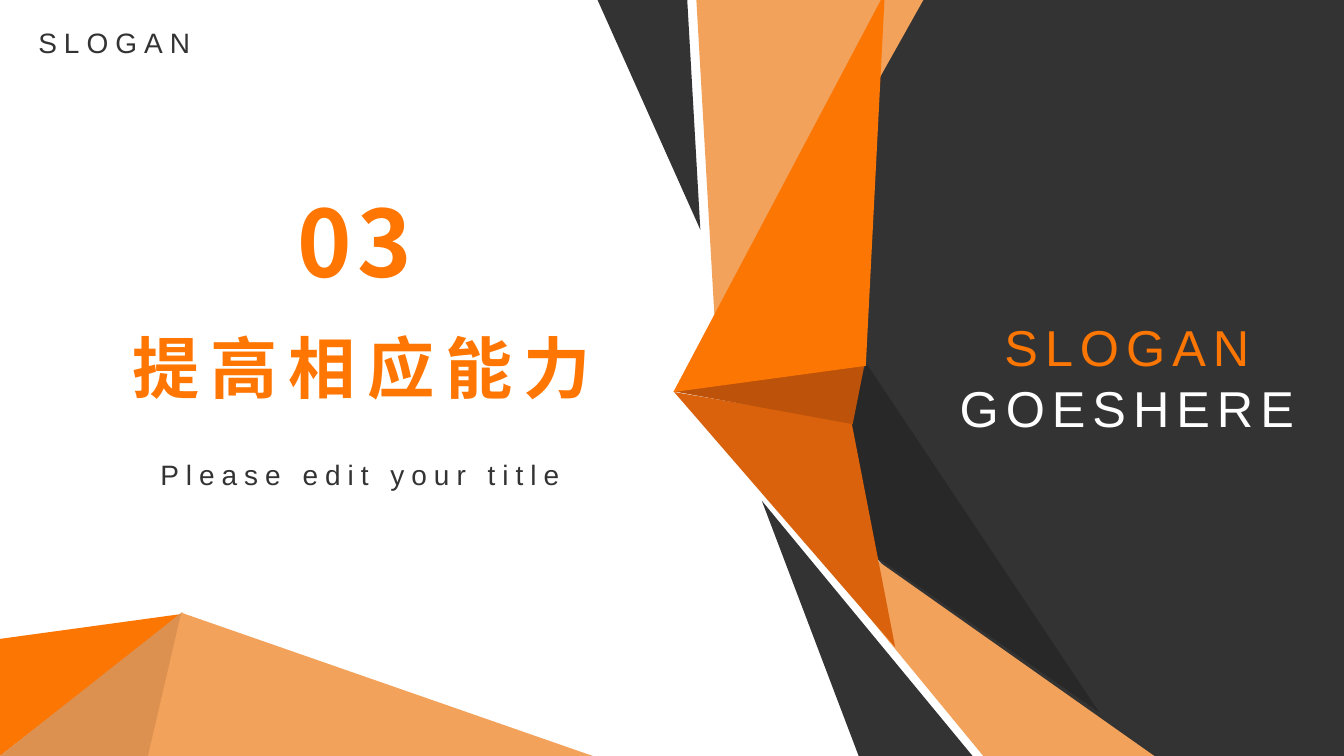
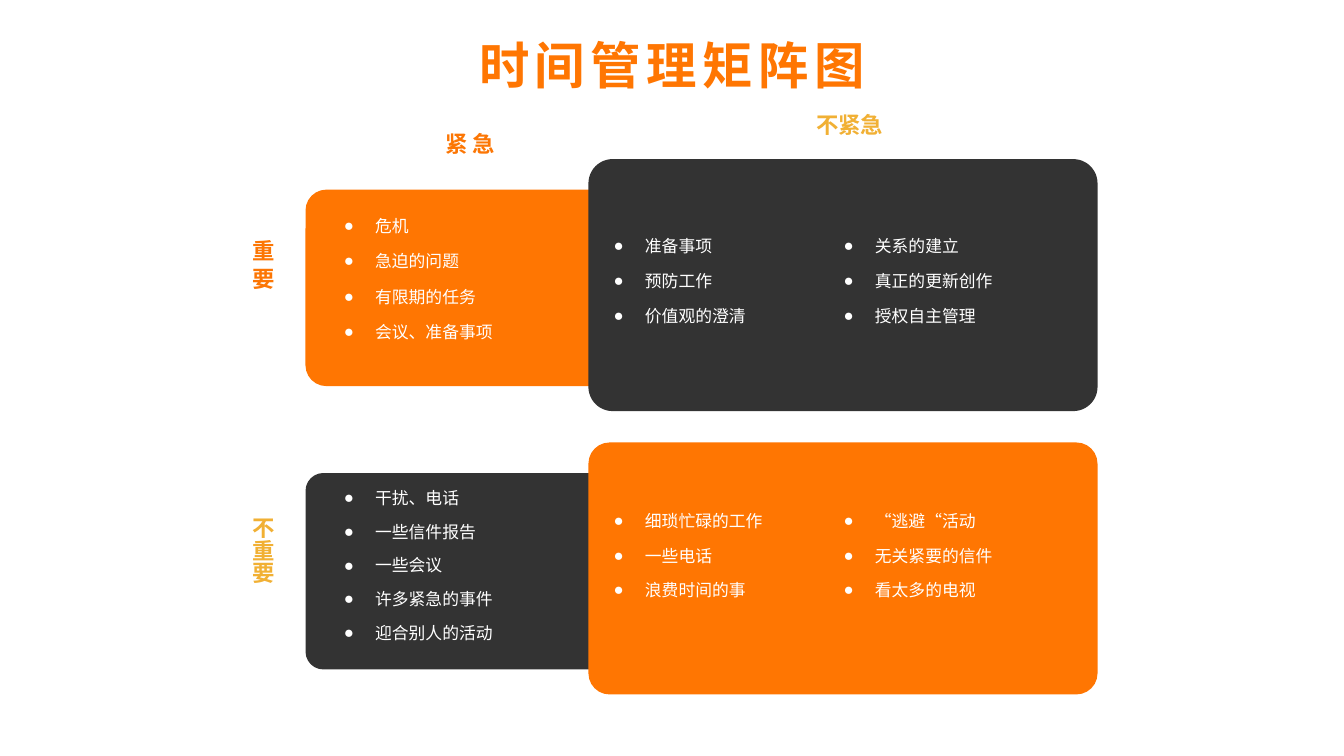
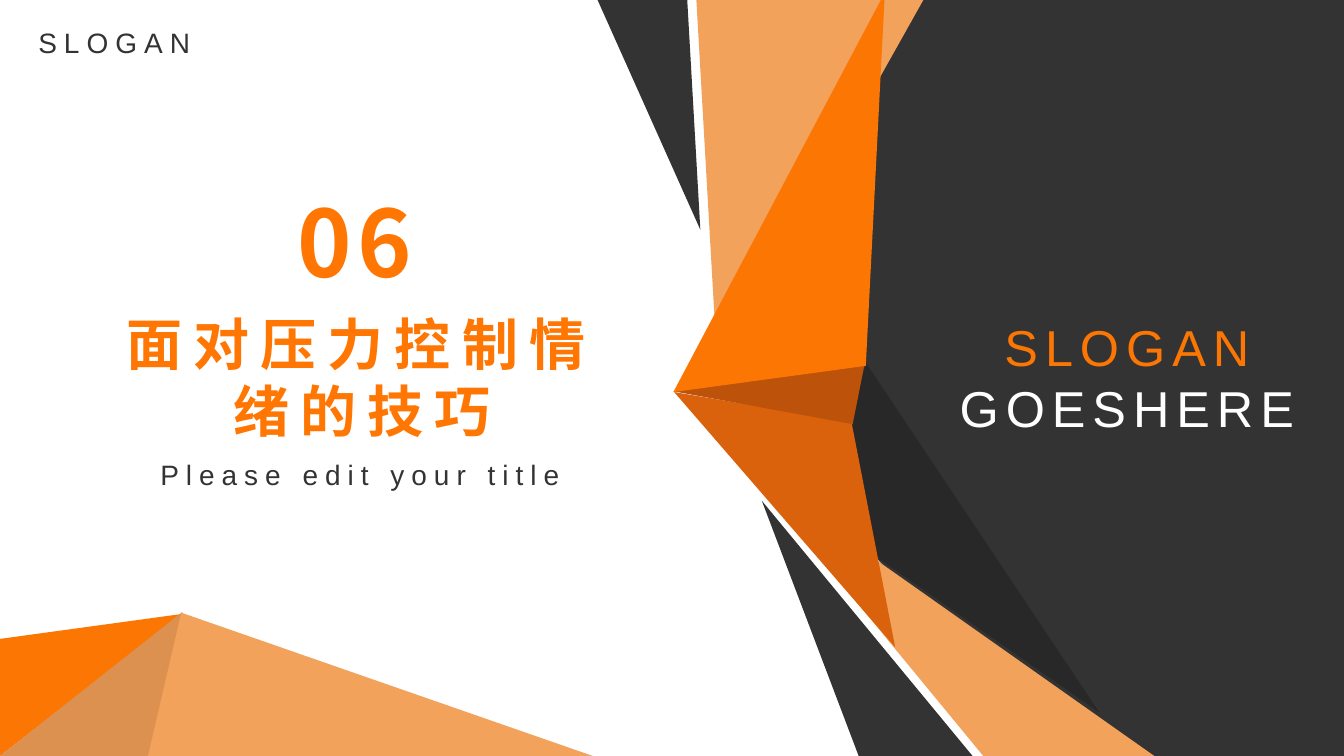
import pptx
import pptx.dml.color
import pptx.enum.shapes
import pptx.enum.text
import pptx.oxml
import pptx.oxml.ns
import pptx.util

Cm = pptx.util.Cm
Pt = pptx.util.Pt
RGBColor = pptx.dml.color.RGBColor
ALIGN = pptx.enum.text.PP_ALIGN

ORANGE = RGBColor(0xFF, 0x76, 0x02)
VIVID = RGBColor(0xFC, 0x76, 0x04)
PALE = RGBColor(0xF2, 0xA2, 0x5B)
TAN = RGBColor(0xDC, 0x91, 0x50)
RUST = RGBColor(0xDA, 0x62, 0x0C)
BROWN = RGBColor(0xBD, 0x52, 0x0A)
AMBER = RGBColor(0xF1, 0xB0, 0x34)
DARK = RGBColor(0x33, 0x33, 0x33)
BLACK = RGBColor(0x00, 0x00, 0x00)
WHITE = RGBColor(0xFF, 0xFF, 0xFF)

CHINESE = "Noto Sans CJK SC"
LATIN = "Arial"
LINE_FACTOR = 1.2
LIST_INDENT = 0.79
WIDTH, HEIGHT = 33.87, 19.05

HEADING = {"name": CHINESE, "bold": True}
CAPTION = {"name": LATIN, "bold": False, "size": Pt(20)}
SLOGAN = {"name": LATIN, "bold": False, "size": Pt(36)}
LABEL = {"name": CHINESE, "bold": True, "size": Pt(16)}
ITEM = {"name": CHINESE, "bold": False, "size": Pt(12)}


def paint(shape, color):
    shape.shadow.inherit = False
    shape.fill.solid()
    shape.fill.fore_color.rgb = color
    shape.line.fill.background()


def write(box, place, lines, look, spacing=0, align=ALIGN.CENTER, pitch=None, bullet=None):
    for name, value in zip(("left", "top", "width", "height"), place):
        setattr(box, name, Cm(value))
    frame = box.text_frame
    frame.word_wrap = True
    frame.auto_size = pptx.enum.text.MSO_AUTO_SIZE.NONE
    frame.vertical_anchor = pptx.enum.text.MSO_ANCHOR.TOP
    paragraph_look = {
        "alignment": align,
        "line_spacing": Pt(pitch or look["size"].pt * LINE_FACTOR),
        "space_before": Pt(0),
        "space_after": Pt(0),
    }
    for number, (text, color) in enumerate(lines):
        para = frame.add_paragraph() if number else frame.paragraphs[0]
        for name, value in paragraph_look.items():
            setattr(para, name, value)
        span = para.add_run()
        span.text = text
        for name, value in look.items():
            setattr(span.font, name, value)
        span.font.color.rgb = color
        run_format = span._r.get_or_add_rPr()
        run_format.set("spc", str(spacing * 100))
        east_asian = pptx.oxml.parse_xml(f'<a:ea {pptx.oxml.ns.nsdecls("a")} typeface="{look["name"]}"/>')
        run_format.append(east_asian)
        if bullet:
            para_format = para._p.get_or_add_pPr()
            para_format.set("marL", str(Cm(LIST_INDENT)))
            para_format.set("indent", str(-Cm(LIST_INDENT)))
            for mark in (f'buFont {pptx.oxml.ns.nsdecls("a")} typeface="{LATIN}"',
                         f'buChar {pptx.oxml.ns.nsdecls("a")} char="{bullet}"'):
                para_format.append(pptx.oxml.parse_xml(f"<a:{mark}/>"))


deck = pptx.Presentation()
deck.slide_width, deck.slide_height = Cm(WIDTH), Cm(HEIGHT)
section_layout, matrix_layout = deck.slide_layouts[0], deck.slide_layouts[4]
first_section, matrix, second_section = [
    deck.slides.add_slide(layout) for layout in (section_layout, matrix_layout, section_layout)
]

facets = [
    (DARK, 100, [(20.4, 0), (WIDTH, 0), (WIDTH, HEIGHT), (26.44, HEIGHT), (20.4, 12.12)]),
    (PALE, 100, [(17.55, 0), (18.08, 9.25), (23.27, 0)]),
    (VIVID, 100, [(0, 16.1), (4.6, 15.47), (0, HEIGHT)]),
    (TAN, 100, [(0, HEIGHT), (4.6, 15.42), (3.76, HEIGHT)]),
    (PALE, 100, [(3.73, HEIGHT), (4.57, 15.44), (14.94, HEIGHT)]),
    (DARK, 100, [(21.64, HEIGHT), (19.2, 12.62), (24.51, HEIGHT)]),
    (PALE, 100, [(24.78, HEIGHT), (18.82, 11.81), (29.09, HEIGHT)]),
    (BLACK, 21, [(20.32, 12.8), (21.84, 9.17), (27.71, 17.96)]),
    (RUST, 100, [(22.56, 16.31), (16.99, 9.88), (21.46, 10.64)]),
    (BROWN, 100, [(21.49, 10.69), (16.97, 9.86), (21.79, 9.17)]),
    (VIVID, 100, [(21.82, 9.22), (16.97, 9.88), (22.2, 0), (22.29, 0)]),
    (DARK, 100, [(17.32, 0), (17.65, 5.79), (15.06, 0)]),
]

sections = [
    (first_section, "03", "提高相应能力", 48, 8.1),
    (second_section, "06", "面对压力控制情绪的技巧", 40, 7.67),
]

for page, number, heading, size, top in sections:
    for color, opacity, corners in facets:
        points = [(Cm(x), Cm(y)) for x, y in corners]
        builder = page.shapes.build_freeform(*points[0])
        builder.add_line_segments(points[1:])
        facet = builder.convert_to_shape()
        paint(facet, color)
        if opacity < 100:
            tint = facet.element.find(".//" + pptx.oxml.ns.qn("a:srgbClr"))
            tint.append(pptx.oxml.parse_xml(
                f'<a:alpha {pptx.oxml.ns.nsdecls("a")} val="{opacity * 1000}"/>'))

    write(page.shapes.title, (2.69, top, 12.85, 3.7), [(heading, ORANGE)],
          {**HEADING, "size": Pt(size)}, spacing=8)
    write(page.placeholders[1], (3.07, 11.4, 12, 1.12), [("Please edit your title", DARK)],
          CAPTION, spacing=5)

    small_texts = [
        ((6.93, 4.55, 4.04, 3.07), [(number, ORANGE)], {**HEADING, "size": Pt(66)}, 4),
        ((23.4, 7.85, 10, 3.33), [("SLOGAN", VIVID), ("GOESHERE", WHITE)], SLOGAN, 5),
        ((0.48, 0.53, 4.8, 1.12), [("SLOGAN", DARK)], CAPTION, 5),
    ]
    for place, lines, look, spacing in small_texts:
        box = page.shapes.add_textbox(0, 0, 0, 0)
        write(box, place, lines, look, spacing)

write(matrix.shapes.title, (6.12, 0.74, 21.64, 1.8), [("时间管理矩阵图", ORANGE)],
      {**HEADING, "size": Pt(36)}, spacing=4)

row_gap = 7.14
for row, (left_color, right_color, left_round, right_round) in enumerate([
    (ORANGE, DARK, 0.106, 0.096),
    (DARK, ORANGE, 0.091, 0.084),
]):
    for color, rounding, (left, top, width, height) in [
        (left_color, left_round, (7.7, 4.78, 7.7, 4.95)),
        (right_color, right_round, (14.83, 4.01, 12.83, 6.35)),
    ]:
        card = matrix.shapes.add_shape(
            pptx.enum.shapes.MSO_SHAPE.ROUNDED_RECTANGLE,
            Cm(left), Cm(top + row * row_gap), Cm(width), Cm(height))
        card.adjustments[0] = rounding
        paint(card, color)

lists = [
    (8.41, 4.93, 25.2, ["危机", "急迫的问题", "有限期的任务", "会议、准备事项"]),
    (15.21, 5.45, 24.8, ["准备事项", "预防工作", "价值观的澄清"]),
    (8.41, 11.82, 24.1, ["干扰、电话", "一些信件报告", "一些会议", "许多紧急的事件", "迎合别人的活动"]),
    (15.21, 12.39, 24.6, ["细琐忙碌的工作", "一些电话", "浪费时间的事"]),
    (21.01, 5.45, 24.8, ["关系的建立", "真正的更新创作", "授权自主管理"]),
    (21.01, 12.39, 24.6, ["“逃避“活动", "无关紧要的信件", "看太多的电视"]),
]
list_boxes = [matrix.placeholders[index] for index in range(1, 5)]
list_boxes += [matrix.shapes.add_textbox(0, 0, 0, 0) for extra in lists[4:]]
for box, (left, top, pitch, items) in zip(list_boxes, lists):
    box.element.getparent().append(box.element)
    write(box, (left, top, 6.1, 4.6), [(item, WHITE) for item in items], ITEM,
          align=ALIGN.LEFT, pitch=pitch, bullet="●")

labels = [
    ("紧 急", VIVID, (10.97, 3.15, 2.59, 1.32), False),
    ("不紧急", AMBER, (20.32, 2.67, 3.73, 1.32), False),
    ("重 要", VIVID, (5.4, 5.79, 1.7, 2.21), True),
    ("不重要", AMBER, (5.4, 12.78, 1.7, 2.79), True),
]
for text, color, place, upright in labels:
    box = matrix.shapes.add_textbox(0, 0, 0, 0)
    write(box, place, [(text, color)], LABEL, align=ALIGN.LEFT)
    if upright:
        box.text_frame._txBody.bodyPr.set("vert", "eaVert")

deck.save("out.pptx")
